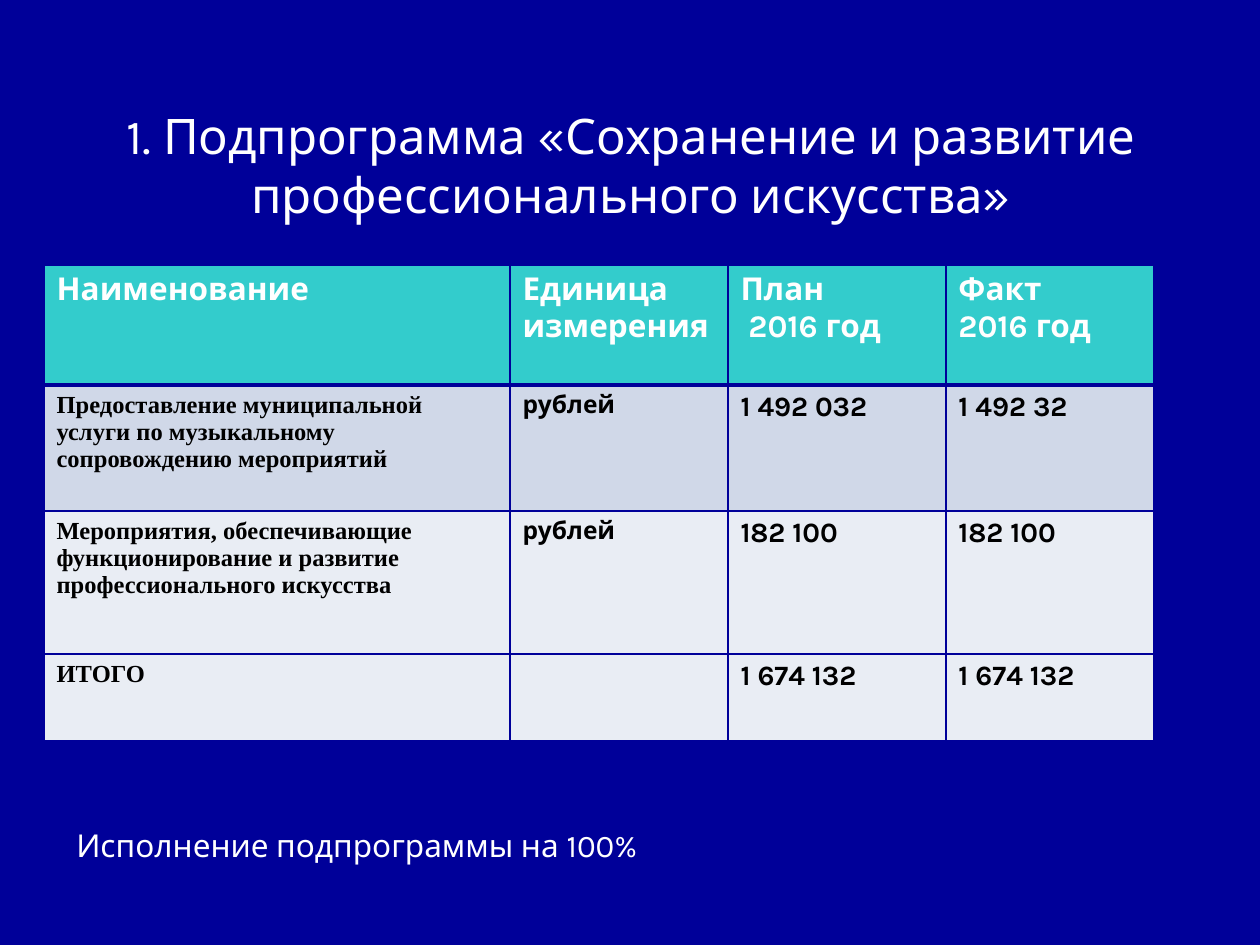
from lxml.etree import SubElement
from pptx import Presentation
from pptx.dml.color import RGBColor
from pptx.enum.text import MSO_ANCHOR as Anchor, PP_ALIGN as Align
from pptx.oxml.ns import qn
from pptx.util import Emu, Pt

PX = 914400 // 126
NAVY = RGBColor(0x00, 0x00, 0x99)
TEAL = RGBColor(0x33, 0xCC, 0xCC)
BLUE_GREY = RGBColor(0xD0, 0xD8, 0xE8)
PALE = RGBColor(0xE9, 0xED, 0xF4)
WHITE = RGBColor(0xFF, 0xFF, 0xFF)
BLACK = RGBColor(0x00, 0x00, 0x00)
SANS, SERIF = "Karla", "Times New Roman"


def px(*lengths):
    return [Emu(length * PX) for length in lengths]


def write(frame, text, size=18, font=SANS, color=WHITE, bold=False, align=Align.LEFT):
    frame.word_wrap = True
    for number, line in enumerate(text.split("\n")):
        paragraph = frame.add_paragraph() if number else frame.paragraphs[0]
        paragraph.alignment = align
        run = paragraph.add_run()
        run.text = line
        run.font.size = Pt(size)
        run.font.name = font
        run.font.color.rgb = color
        run.font.bold = bold


deck = Presentation()
deck.slide_width, deck.slide_height = px(1260, 945)
slide = deck.slides.add_slide(deck.slide_layouts[6])
slide.background.fill.solid()
slide.background.fill.fore_color.rgb = NAVY

title = slide.shapes.add_textbox(*px(64, 115, 1134, 157)).text_frame
title.vertical_anchor = Anchor.BOTTOM
title.margin_bottom = px(49)[0]
write(title, "1. Подпрограмма «Сохранение и развитие профессионального искусства»",
      size=28, align=Align.CENTER)

column_widths = px(466, 218, 218, 208)
row_heights = px(120, 126, 143, 87)
row_fills = [TEAL, BLUE_GREY, PALE, PALE]
budget = [
    ["Наименование", "Единица измерения", "План\n 2016 год", "Факт\n2016 год"],
    ["Предоставление муниципальной услуги по музыкальному сопровождению мероприятий",
     "рублей", "1 492 032", "1 492 32"],
    ["Мероприятия, обеспечивающие функционирование и развитие профессионального искусства",
     "рублей", "182 100", "182 100"],
    ["ИТОГО", "", "1 674 132", "1 674 132"],
]
header_format = dict(size=18, color=WHITE)
column_formats = [
    dict(size=14, font=SERIF, color=BLACK),
    dict(size=14, color=BLACK),
    dict(size=16, color=BLACK),
    dict(size=16, color=BLACK),
]

table = slide.shapes.add_table(
    len(budget), len(column_widths), *px(44, 265, 1110, 476)).table
for column, width in zip(table.columns, column_widths):
    column.width = width
for row, height in zip(table.rows, row_heights):
    row.height = height

for r, entries in enumerate(budget):
    for c, entry in enumerate(entries):
        cell = table.cell(r, c)
        if entry:
            write(cell.text_frame, entry, bold=True,
                  **(column_formats[c] if r else header_format))
        properties = cell._tc.get_or_add_tcPr()
        for side in ("lnL", "lnR", "lnT", "lnB"):
            thick = (r, side) in ((0, "lnB"), (1, "lnT"))
            border = SubElement(properties, qn("a:" + side), w=str(Pt(3 if thick else 1)))
            SubElement(SubElement(border, qn("a:solidFill")), qn("a:srgbClr"), val=str(NAVY))
        cell.fill.solid()
        cell.fill.fore_color.rgb = row_fills[r]

result = slide.shapes.add_textbox(*px(64, 820, 1091, 50)).text_frame
write(result, "Исполнение подпрограммы на 100%")

deck.save("out.pptx")
